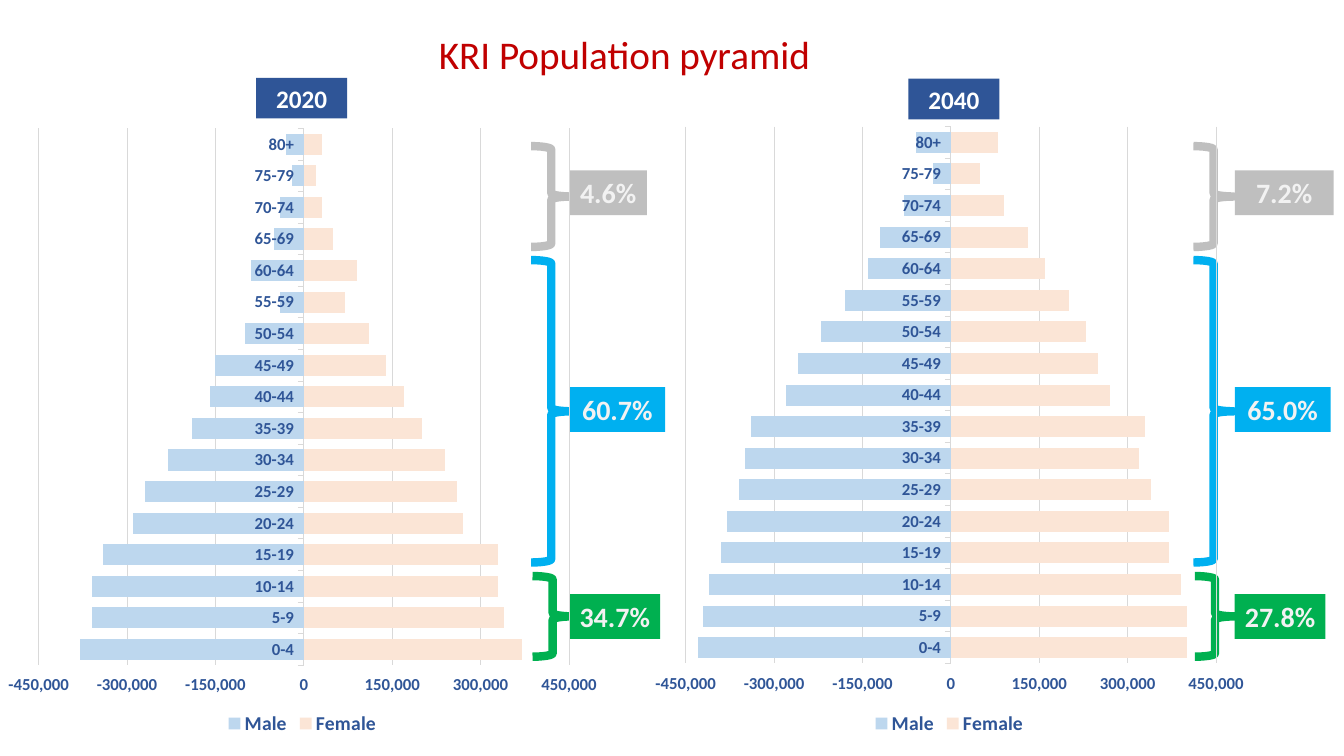
from pptx import Presentation, oxml
from pptx import util as u
from pptx.chart import data
from pptx.dml import color as col
from pptx.enum import chart as kind, shapes, text

FONT = "Calibri"
HEX = {"red": "C00000", "navy": "2F5597", "white": "FFFFFF", "pale": "F2F2F2",
       "gray": "BFBFBF", "blue": "00B0F0", "green": "00B050",
       "grid": "D9D9D9", "male": "BDD7EE", "female": "FBE5D6"}
RGB = {name: col.RGBColor.from_string(code) for name, code in HEX.items()}


def style(font, size, tint, bold=True):
    font.name, font.size, font.bold = FONT, u.Pt(size), bold
    font.color.rgb = RGB[tint]


def label(words, box, fill, size, tint):
    tag = slide.shapes.add_shape(shapes.MSO_SHAPE.RECTANGLE, *map(u.Pt, box))
    tag.shadow.inherit = False
    tag.fill.solid()
    tag.fill.fore_color.rgb = RGB[fill]
    tag.line.fill.background()
    frame = tag.text_frame
    frame.word_wrap = False
    frame.vertical_anchor = text.MSO_ANCHOR.MIDDLE
    para = frame.paragraphs[0]
    para.text = words
    para.alignment = text.PP_ALIGN.CENTER
    style(para.font, size, tint)


deck = Presentation()
deck.slide_width, deck.slide_height = u.Pt(960), u.Pt(540)
slide = deck.slides.add_slide(deck.slide_layouts[5])

# Title
title = slide.shapes.title
title.left, title.top, title.width, title.height = map(u.Pt, (291, 18, 310, 41))
title.text_frame.text = "KRI Population pyramid"
title.text_frame.word_wrap = False
head = title.text_frame.paragraphs[0]
head.alignment = text.PP_ALIGN.CENTER
style(head.font, 28, "red", False)

# Age groups: 0-4, 5-9 ... 75-79, 80+
ages = [f"{age}-{age + 4}" for age in range(0, 80, 5)] + ["80+"]

# Age bands: colour, brace shift, brace top and height, label top
bands = [("gray", 0, 104.4, 72, 121.7),
         ("blue", 0, 185.8, 216, 276.5),
         ("green", 1, 411.5, 57.6, 424.3)]

# One pyramid per year, population in units of 10,000
years = [
    {"year": "2020", "tag": (183, 55.6), "brace": 379.4, "label": 406.8,
     "shares": [("4.6%", 55.4), ("60.7%", 68.4), ("34.7%", 64.8)],
     "left": 0, "plot": 0.022,
     "male": [38, 36, 36, 34, 29, 27, 23, 19, 16, 15, 10, 4, 9, 5, 4, 2, 3],
     "female": [37, 34, 33, 33, 27, 26, 24, 20, 17, 14, 11, 7, 9, 5, 3, 2, 3]},
    {"year": "2040", "tag": (648.8, 56.2), "brace": 852.5, "label": 882,
     "shares": [("7.2%", 70.6), ("65.0%", 68.4), ("27.8%", 64.8)],
     "left": 462.2, "plot": 0.019,
     "male": [43, 42, 41, 39, 38, 36, 35, 34, 28, 26, 22, 18, 14, 12, 8, 3, 6],
     "female": [40, 40, 39, 37, 37, 34, 32, 33, 27, 25, 23, 20, 16, 13, 9, 5, 8]},
]

for item in years:
    # Braces with their shares, and the year
    for (tint, shift, top, high, low), (share, wide) in zip(bands, item["shares"]):
        brace = slide.shapes.add_shape(
            shapes.MSO_SHAPE.RIGHT_BRACE,
            *map(u.Pt, (item["brace"] + shift, top, 28.8, high)))
        brace.shadow.inherit = False
        brace.fill.background()
        brace.line.color.rgb = RGB[tint]
        brace.line.width = u.Pt(6)
        label(share, (item["label"], low, wide, 32), tint, 20, "pale")
    label(item["year"], (*item["tag"], 65, 29), "navy", 18, "white")

    # Population chart, males to the left of zero
    table = data.CategoryChartData(number_format="#,##0")
    table.categories = ages
    table.add_series("Male", [-10000 * n for n in item["male"]])
    table.add_series("Female", [10000 * n for n in item["female"]])
    chart = slide.shapes.add_chart(
        kind.XL_CHART_TYPE.BAR_STACKED,
        *map(u.Pt, (item["left"], 82, 432, 446.4)), table).chart
    chart.has_title = False
    chart.font.name, chart.font.size = FONT, u.Pt(10)
    chart.has_legend = True
    chart.legend.position = kind.XL_LEGEND_POSITION.BOTTOM
    chart.legend.include_in_layout = False
    style(chart.legend.font, 14, "navy")

    bars = chart.plots[0]
    bars.gap_width, bars.overlap = 50, 100
    bars.vary_by_categories = False
    for series, tint in zip(bars.series, ("male", "female")):
        series.invert_if_negative = False
        series.format.fill.solid()
        series.format.fill.fore_color.rgb = RGB[tint]

    # Axes and grid
    across, down = chart.value_axis, chart.category_axis
    for axis in (across, down):
        style(axis.tick_labels.font, 12, "navy")
        axis.major_tick_mark = kind.XL_TICK_MARK.OUTSIDE
        axis.minor_tick_mark = kind.XL_TICK_MARK.NONE
    across.minimum_scale, across.maximum_scale = -450000, 450000
    across.major_unit = 150000
    across.tick_labels.number_format = "#,##0"
    across.tick_labels.number_format_is_linked = False
    across.format.line.fill.background()
    across.has_major_gridlines = True
    down.has_major_gridlines = False
    for line in (across.major_gridlines.format.line, down.format.line):
        line.color.rgb = RGB["grid"]
        line.width = u.Pt(0.75)

    # Fixed plot area
    area = chart.element.xpath("c:chart/c:plotArea")[0]
    for old in area.xpath("c:layout"):
        area.remove(old)
    spots = "".join(f'<c:{key} val="{val}"/>' for key, val in (
        ("layoutTarget", "inner"), ("xMode", "edge"), ("yMode", "edge"),
        ("x", 0.064), ("y", item["plot"]), ("w", 0.877), ("h", 0.859)))
    area.insert(0, oxml.parse_xml(
        '<c:layout xmlns:c="http://schemas.openxmlformats.org/drawingml/2006/chart">'
        f"<c:manualLayout>{spots}</c:manualLayout></c:layout>"))

deck.save("out.pptx")
